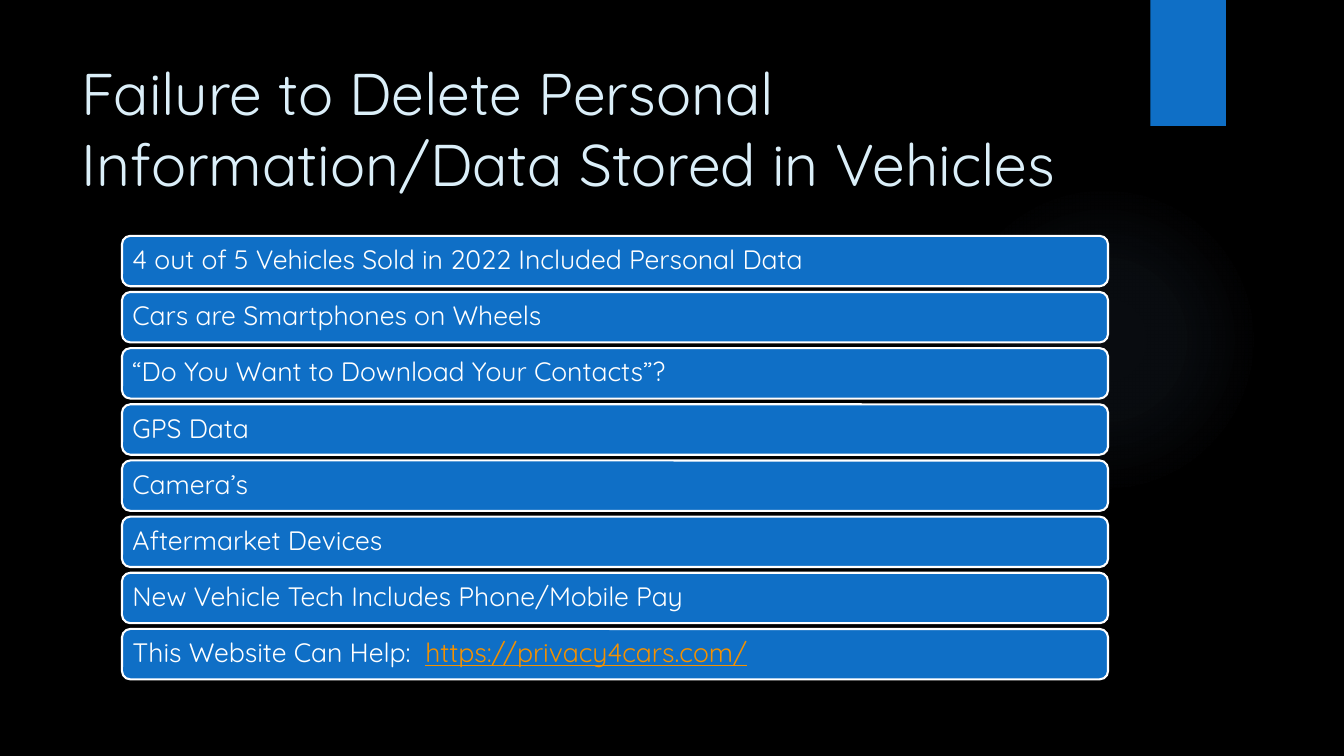
from dataclasses import dataclass

from lxml import etree
from pptx import Presentation
from pptx.dml.color import RGBColor
from pptx.enum import shapes, text
from pptx.oxml import ns
from pptx.util import Inches, Pt


@dataclass(frozen=True)
class Theme:
    font: str = "Quicksand"
    background: str = "000000"
    accent: str = "0F6FC6"
    glow: str = "82B1E5"
    title: str = "DBEFF9"
    body: str = "FFFFFF"
    link: str = "F49100"
    title_size: int = 42
    body_size: int = 19


THEME = Theme()
FACTS = [
    ["4 out of 5 Vehicles Sold in 2022 Included Personal Data"],
    ["Cars are Smartphones on Wheels"],
    ["“Do You Want to Download Your Contacts”?"],
    ["GPS Data"],
    ["Camera’s"],
    ["Aftermarket Devices"],
    ["New Vehicle Tech Includes Phone/Mobile Pay"],
    ["This Website Can Help:  ", "https://privacy4cars.com/"],
]
FIRST_TOP, LAST_TOP = 2.34, 6.24


def add_filled(kind, left, top, width, height, color):
    shape = slide.shapes.add_shape(
        kind, Inches(left), Inches(top), Inches(width), Inches(height))
    shape.shadow.inherit = False
    shape.fill.solid()
    shape.fill.fore_color.rgb = RGBColor.from_string(color)
    shape.line.fill.background()
    return shape


def style_font(font, size, color):
    font.name = THEME.font
    font.size = Pt(size)
    font.color.rgb = RGBColor.from_string(color)


prs = Presentation()
prs.slide_width, prs.slide_height = Inches(13.33), Inches(7.5)
slide = prs.slides.add_slide(prs.slide_layouts[5])
slide.background.fill.solid()
slide.background.fill.fore_color.rgb = RGBColor.from_string(THEME.background)

# Soft round glow behind the list
glow = add_filled(shapes.MSO_SHAPE.OVAL, 9.41, 1.83, 3.08, 3.08, THEME.glow)
stops = "".join(
    f'<a:gs pos="{position * 1000}"><a:srgbClr val="{THEME.glow}">'
    f'<a:alpha val="{alpha * 1000}"/></a:srgbClr></a:gs>'
    for position, alpha in [(0, 7), (36, 6), (69, 0), (100, 0)])
gradient = etree.fromstring(
    f'<a:gradFill {ns.nsdecls("a")}><a:gsLst>{stops}</a:gsLst>'
    '<a:path path="circle"><a:fillToRect l="50000" t="50000" r="50000" b="50000"/>'
    '</a:path></a:gradFill>')
solid = glow.element.spPr.find(ns.qn("a:solidFill"))
glow.element.spPr.replace(solid, gradient)

add_filled(shapes.MSO_SHAPE.RECTANGLE, 11.41, 0, 0.75, 1.25, THEME.accent)

title = slide.shapes.title
title.left, title.top = Inches(0.71), Inches(0.5)
title.width, title.height = Inches(10.29), Inches(1.53)
title.text_frame.text = "Failure to Delete Personal Information/Data Stored in Vehicles"
title.text_frame.auto_size = text.MSO_AUTO_SIZE.NONE
title.text_frame.vertical_anchor = text.MSO_ANCHOR.MIDDLE
heading = title.text_frame.paragraphs[0]
heading.alignment = text.PP_ALIGN.LEFT
style_font(heading.runs[0].font, THEME.title_size, THEME.title)

pitch = (LAST_TOP - FIRST_TOP) / (len(FACTS) - 1)
for row, parts in enumerate(FACTS):
    bar = add_filled(shapes.MSO_SHAPE.ROUNDED_RECTANGLE,
                     1.21, FIRST_TOP + row * pitch, 9.78, 0.5, THEME.accent)
    bar.line.color.rgb = RGBColor.from_string(THEME.body)
    bar.line.width = Pt(1.5)
    frame = bar.text_frame
    frame.vertical_anchor = text.MSO_ANCHOR.MIDDLE
    frame.margin_left = frame.margin_right = Inches(0.08)
    frame.margin_top = frame.margin_bottom = Inches(0.05)
    fact = frame.paragraphs[0]
    fact.alignment = text.PP_ALIGN.LEFT
    fact.line_spacing = 0.9
    for part in parts:
        run = fact.add_run()
        run.text = part
        is_link = part.startswith("https://")
        style_font(run.font, THEME.body_size, THEME.link if is_link else THEME.body)
        if is_link:
            run.font.underline = True

prs.save("out.pptx")
